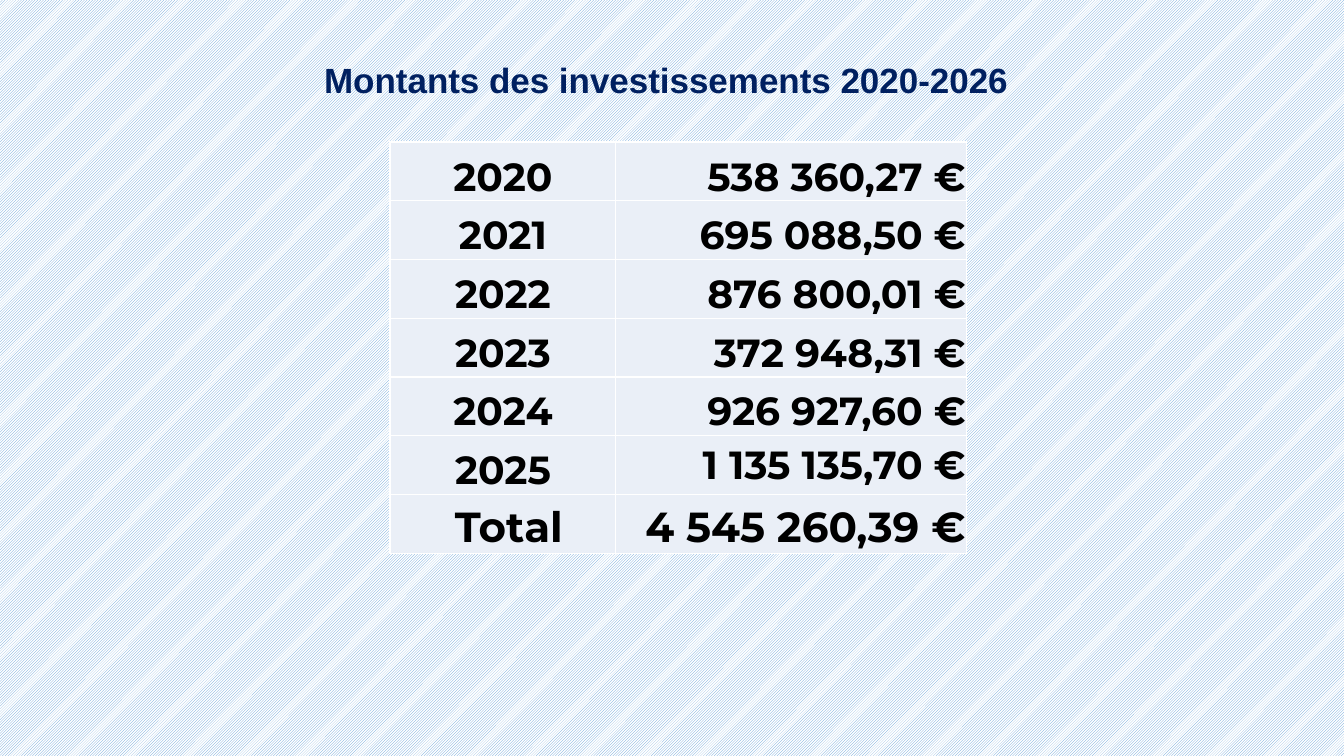
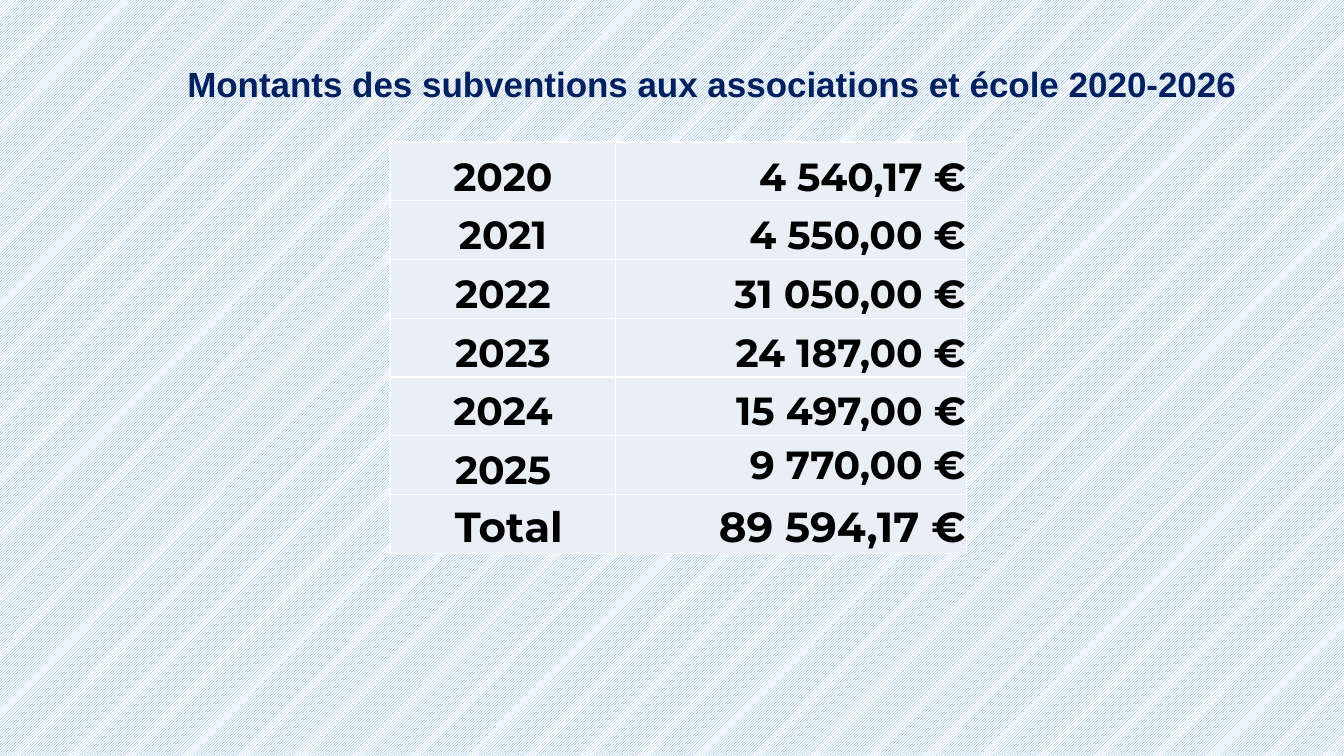
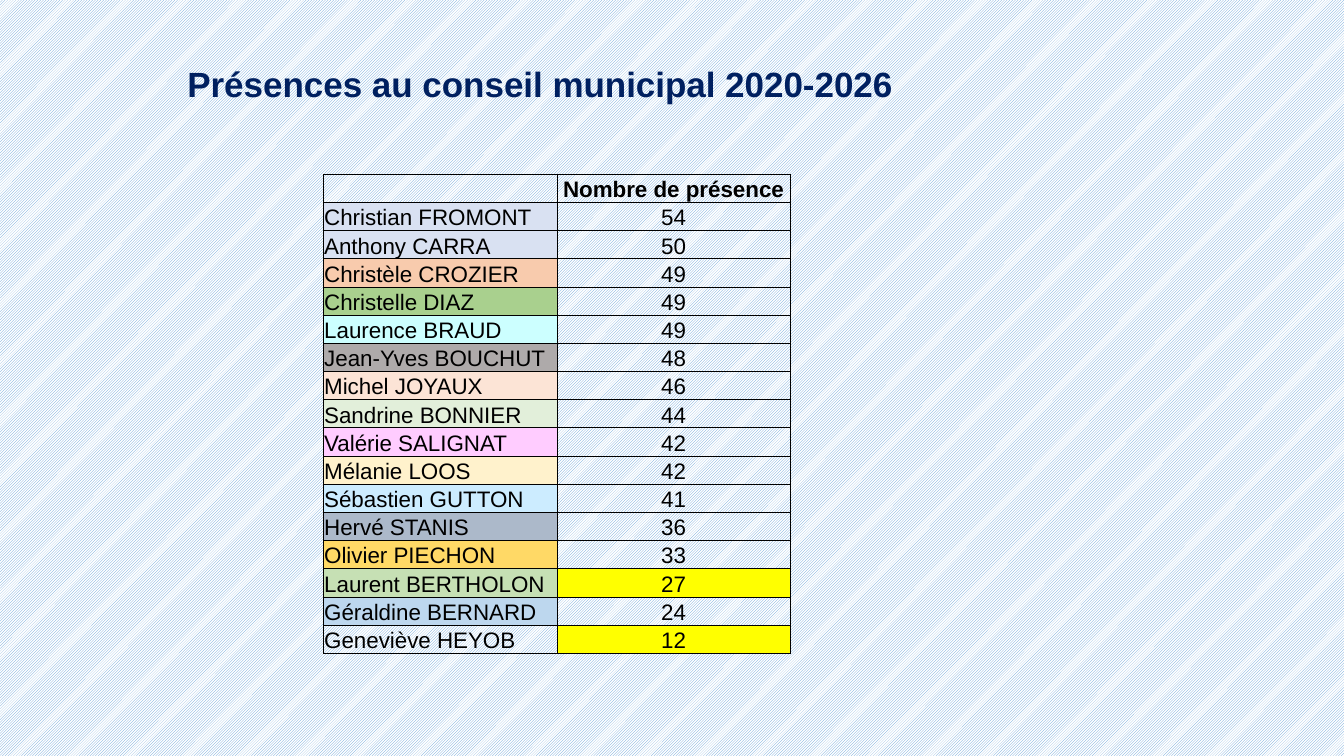
from lxml.etree import SubElement
from pptx import Presentation
from pptx.dml.color import RGBColor
from pptx.enum.dml import MSO_PATTERN
from pptx.enum.text import MSO_ANCHOR, MSO_AUTO_SIZE, PP_ALIGN
from pptx.oxml.ns import qn
from pptx.util import Cm, Pt

COLORS = {
    "stripe": "5B9BD5", "white": "FFFFFF", "black": "000000",
    "title": "002060", "amount": "EAEFF7", "alert": "FFFF00",
}


class Deck:
    """Shared style and the slide being filled."""

    def __init__(self):
        self.prs = Presentation()
        self.prs.slide_width, self.prs.slide_height = Cm(33.87), Cm(19.05)
        self.slide = None
        # Striped background shared by all slides
        stripes = self.prs.slide_master.background.fill
        stripes.patterned()
        stripes.pattern = MSO_PATTERN.DARK_UPWARD_DIAGONAL
        stripes.fore_color.rgb = RGBColor.from_string(COLORS["stripe"])
        stripes.back_color.rgb = RGBColor.from_string(COLORS["white"])

    def new_slide(self):
        self.slide = self.prs.slides.add_slide(self.prs.slide_layouts[6])

    def add_text(self, paragraph, text, size, font, color, bold):
        run = paragraph.add_run()
        run.text = text
        run.font.size, run.font.name, run.font.bold = Pt(size), font, bold
        run.font.color.rgb = RGBColor.from_string(color)

    def title(self, text, width, left=4.47, top=1.45):
        box = self.slide.shapes.add_textbox(Cm(left), Cm(top), Cm(width), Cm(1.32))
        frame = box.text_frame
        frame.word_wrap = False
        frame.auto_size = MSO_AUTO_SIZE.SHAPE_TO_FIT_TEXT
        self.add_text(frame.paragraphs[0], text, 25, "Arial", COLORS["title"], True)

    def table(self, left, top, widths, row_height, row_count):
        grid = self.slide.shapes.add_table(
            row_count, len(widths), Cm(left), Cm(top),
            Cm(sum(widths)), Cm(row_height * row_count)).table
        grid.first_row = grid.horz_banding = False
        for column, width in zip(grid.columns, widths):
            column.width = Cm(width)
        for row in grid.rows:
            row.height = Cm(row_height)
        return grid

    def cell(self, cell, text, size, font, align, border, line_width,
             fill=None, bold=False, anchor=MSO_ANCHOR.BOTTOM):
        cell.margin_left = cell.margin_right = cell.margin_top = Cm(0.02)
        cell.margin_bottom = 0
        cell.vertical_anchor = anchor
        # Borders
        properties = cell._tc.get_or_add_tcPr()
        for side in ("a:lnL", "a:lnR", "a:lnT", "a:lnB"):
            line = SubElement(properties, qn(side), w=str(Pt(line_width)))
            solid = SubElement(line, qn("a:solidFill"))
            SubElement(solid, qn("a:srgbClr"), val=border)
        # Fill
        if fill:
            cell.fill.solid()
            cell.fill.fore_color.rgb = RGBColor.from_string(fill)
        else:
            cell.fill.background()
        # Text; an empty cell keeps the size so that its row does not grow
        paragraph = cell.text_frame.paragraphs[0]
        paragraph.alignment = align
        if text:
            self.add_text(paragraph, text, size, font, COLORS["black"], bold)
        else:
            SubElement(paragraph._p, qn("a:endParaRPr"), sz=str(size * 100))

    def amounts(self, amounts):
        """Yearly amounts, closed by a larger total."""
        labels = ["2020", "2021", "2022", "2023", "2024", "2025", " Total"]
        grid = self.table(9.83, 3.58, (5.69, 8.84), 1.48, len(labels))
        for row, (label, amount) in enumerate(zip(labels, amounts)):
            size = 30 if label == labels[-1] else 28
            anchor = MSO_ANCHOR.MIDDLE if label == "2025" else MSO_ANCHOR.BOTTOM
            style = dict(size=size, font="Montserrat", border=COLORS["white"],
                         line_width=1, fill=COLORS["amount"], bold=True)
            self.cell(grid.cell(row, 0), label, align=PP_ALIGN.CENTER, **style)
            self.cell(grid.cell(row, 1), amount, align=PP_ALIGN.RIGHT,
                      anchor=anchor, **style)

    def attendance(self, members):
        """Members with their own colour and number of attendances."""
        grid = self.table(8.15, 4.39, (5.89, 5.87), 0.71, len(members) + 1)
        style = dict(size=16, font="Arial", border=COLORS["black"], line_width=0.5)
        self.cell(grid.cell(0, 0), "", align=PP_ALIGN.LEFT, **style)
        self.cell(grid.cell(0, 1), "Nombre de présence", align=PP_ALIGN.CENTER,
                  bold=True, **style)
        for row, (name, count, name_fill, count_fill) in enumerate(members, 1):
            self.cell(grid.cell(row, 0), name, align=PP_ALIGN.LEFT,
                      fill=name_fill, **style)
            self.cell(grid.cell(row, 1), str(count), align=PP_ALIGN.CENTER,
                      fill=count_fill, **style)


INVESTMENTS = ["538 360,27 €", "695 088,50 €", "876 800,01 €", "372 948,31 €",
               "926 927,60 €", "1 135 135,70 €", "4 545 260,39 €"]
GRANTS = ["4 540,17 €", "4 550,00 €", "31 050,00 €", "24 187,00 €",
          "15 497,00 €", "9 770,00 €", "89 594,17 €"]
MEMBERS = [
    ("Christian FROMONT", 54, "D9E1F2", None),
    ("Anthony CARRA", 50, "D9E1F2", None),
    ("Christèle CROZIER", 49, "F8CBAD", None),
    ("Christelle DIAZ", 49, "A9D08E", None),
    ("Laurence BRAUD", 49, "CCFFFF", None),
    ("Jean-Yves BOUCHUT", 48, "AEAAAA", None),
    ("Michel JOYAUX", 46, "FCE4D6", None),
    ("Sandrine BONNIER", 44, "E2EFDA", None),
    ("Valérie SALIGNAT", 42, "FFCCFF", None),
    ("Mélanie LOOS", 42, "FFF2CC", None),
    ("Sébastien GUTTON", 41, "CCECFF", None),
    ("Hervé STANIS", 36, "ACB9CA", None),
    ("Olivier PIECHON", 33, "FFD966", None),
    ("Laurent BERTHOLON", 27, "C6E0B4", COLORS["alert"]),
    ("Géraldine BERNARD", 24, "BDD7EE", None),
    ("Geneviève HEYOB", 12, None, COLORS["alert"]),
]


def main():
    deck = Deck()

    # Investments
    deck.new_slide()
    deck.amounts(INVESTMENTS)
    deck.title("Montants des investissements 2020-2026", 17.93, left=7.92, top=1.35)

    # Grants
    deck.new_slide()
    deck.amounts(GRANTS)
    deck.title("Montants des subventions aux associations et école 2020-2026", 27.28)

    # Council attendance
    deck.new_slide()
    deck.title("Présences au conseil municipal 2020-2026", 18.47)
    deck.attendance(MEMBERS)

    deck.prs.save("out.pptx")


if __name__ == "__main__":
    main()
